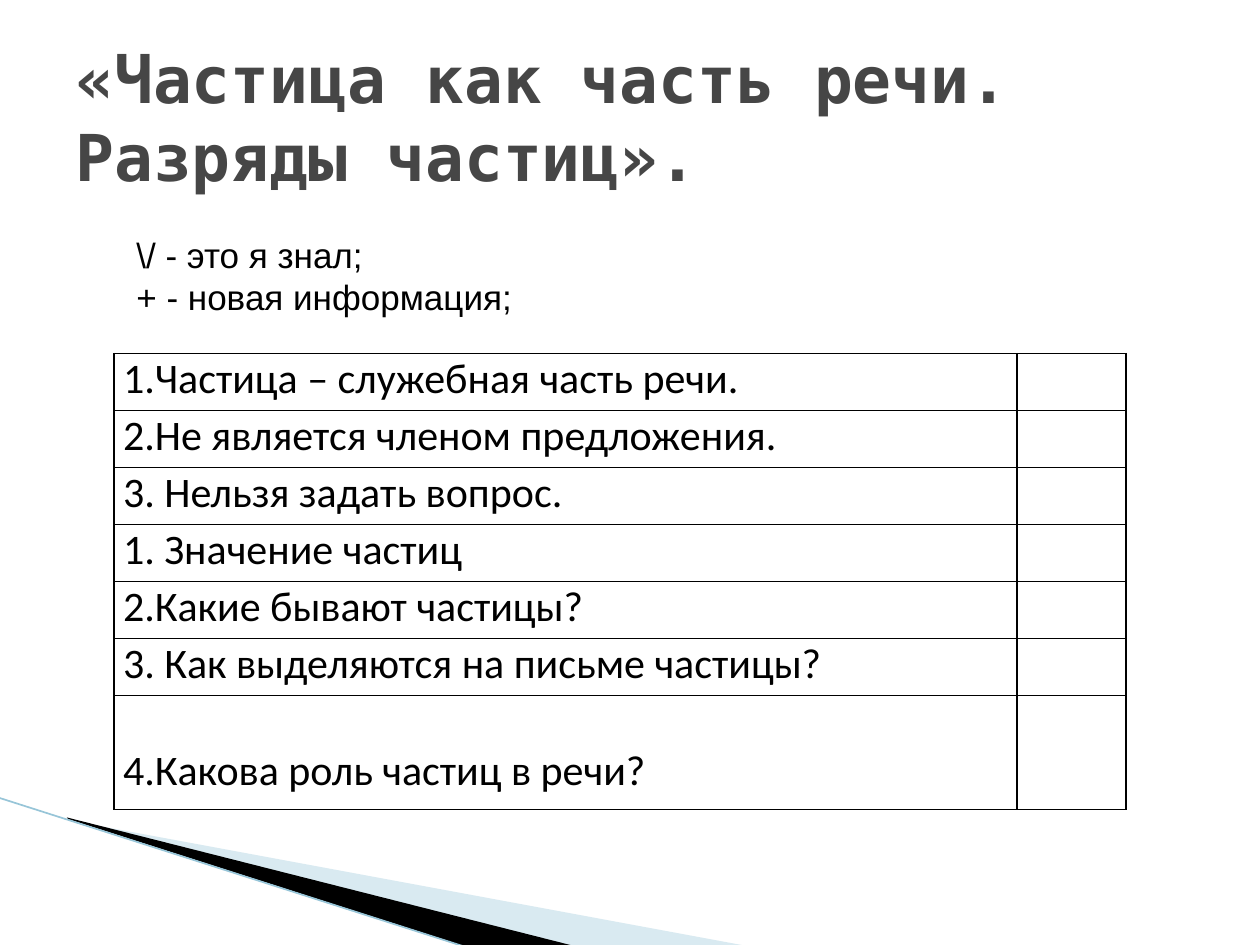
"""Build a slide on the particle as a part of speech, with a checklist table."""
from lxml import etree
from pptx import Presentation
from pptx.dml.color import RGBColor
from pptx.enum.shapes import MSO_CONNECTOR
from pptx.enum.text import MSO_ANCHOR, PP_ALIGN
from pptx.oxml import parse_xml
from pptx.oxml.ns import nsdecls, qn
from pptx.util import Cm, Pt

BLACK = RGBColor(0, 0, 0)
GREY = RGBColor(0x46, 0x46, 0x46)
PALE = RGBColor(0xA0, 0xCB, 0xDC)
BLUE = RGBColor(0x97, 0xC5, 0xD8)
MIDDLE, BOTTOM = MSO_ANCHOR.MIDDLE, MSO_ANCHOR.BOTTOM
JUSTIFY, LEFT = PP_ALIGN.JUSTIFY, PP_ALIGN.LEFT
STRAIGHT = MSO_CONNECTOR.STRAIGHT

TITLE = "«Частица как часть речи.\vРазряды частиц»."
LEGEND = "\\/ - это я знал;\n+ - новая информация;"
ROWS = [
    "1.Частица – служебная часть речи.",
    "2.Не является членом предложения.",
    "3. Нельзя задать вопрос.",
    "1. Значение частиц",
    "2.Какие бывают частицы?",
    "3. Как выделяются на письме частицы?",
    "4.Какова роль частиц в речи?",
]
WIDTHS = (18.2, 2.2)
ROW = 1.15


def style(frame, face, size, color, bold=False, align=LEFT):
    for para in frame.paragraphs:
        para.alignment = align
        for run in para.runs:
            run.font.name = face
            run.font.size = Pt(size)
            run.font.bold = bold
            run.font.color.rgb = color


def add_text(slide, text, box, *look, **more):
    frame = slide.shapes.add_textbox(*map(Cm, box)).text_frame
    frame.word_wrap = True
    frame.vertical_anchor = MIDDLE
    frame.text = text
    style(frame, *look, **more)


def add_wedge(slide, points, color, alpha=None):
    start, *rest = [(Cm(x), Cm(y)) for x, y in points]
    pen = slide.shapes.build_freeform(*start)
    pen.add_line_segments(rest, close=True)
    wedge = pen.convert_to_shape()
    wedge.shadow.inherit = False
    wedge.fill.solid()
    wedge.fill.fore_color.rgb = color
    wedge.line.fill.background()
    if alpha:
        tone = wedge.fill._xPr.find(".//" + qn("a:srgbClr"))
        etree.SubElement(tone, qn("a:alpha"), val=str(alpha * 1000))


def add_line(slide, ends, color, width):
    line = slide.shapes.add_connector(STRAIGHT, *map(Cm, ends))
    line.line.color.rgb = color
    line.line.width = Pt(width)
    etree.SubElement(line._element.spPr, qn("a:effectLst"))


def frame_cell(cell):
    props = cell._tc.get_or_add_tcPr()
    for side in ("lnL", "lnR", "lnT", "lnB"):
        props.append(parse_xml(
            f'<a:{side} {nsdecls("a")} w="12700"><a:solidFill>'
            f'<a:srgbClr val="{BLACK}"/></a:solidFill></a:{side}>'))
    cell.fill.background()


def add_grid(slide):
    heights = [ROW] * (len(ROWS) - 1) + [2 * ROW]
    box = (2.3, 7.13, sum(WIDTHS), sum(heights))
    grid = slide.shapes.add_table(len(ROWS), 2, *map(Cm, box)).table
    grid.first_row = grid.horz_banding = False
    for col, width in zip(grid.columns, WIDTHS):
        col.width = Cm(width)
    for row, height, text in zip(grid.rows, heights, ROWS):
        row.height = Cm(height)
        for cell in row.cells:
            frame_cell(cell)
        cell = row.cells[0]
        cell.margin_left = cell.margin_right = Cm(0.18)
        cell.margin_top = cell.margin_bottom = 0
        cell.text_frame.text = text
        style(cell.text_frame, "Calibri", 24, BLACK)
    cell.vertical_anchor = BOTTOM
    cell.margin_bottom = Cm(0.25)


def main():
    deck = Presentation()
    deck.slide_width, deck.slide_height = Cm(25.4), Cm(19.05)
    slide = deck.slides.add_slide(deck.slide_layouts[6])
    add_wedge(slide, [(1.4, 16.54), (15.11, 19.08), (11.58, 19.08),
                      (1.4, 16.51)], PALE, 40)
    add_wedge(slide, [(1.35, 16.48), (11.61, 19.08), (9.45, 19.1),
                      (1.37, 16.51)], BLACK)
    add_line(slide, (-0.03, 16.08, 9.42, 19.1), BLUE, 0.95)
    add_text(slide, TITLE, (1.27, 0.76, 22.86, 3.18),
             "DejaVu Sans Mono", 36.9, GREY, bold=True)
    add_grid(slide)
    add_text(slide, LEGEND, (2.5, 4.57, 22, 1.96),
             "Arial", 20, BLACK, align=JUSTIFY)
    deck.save("out.pptx")


if __name__ == "__main__":
    main()
